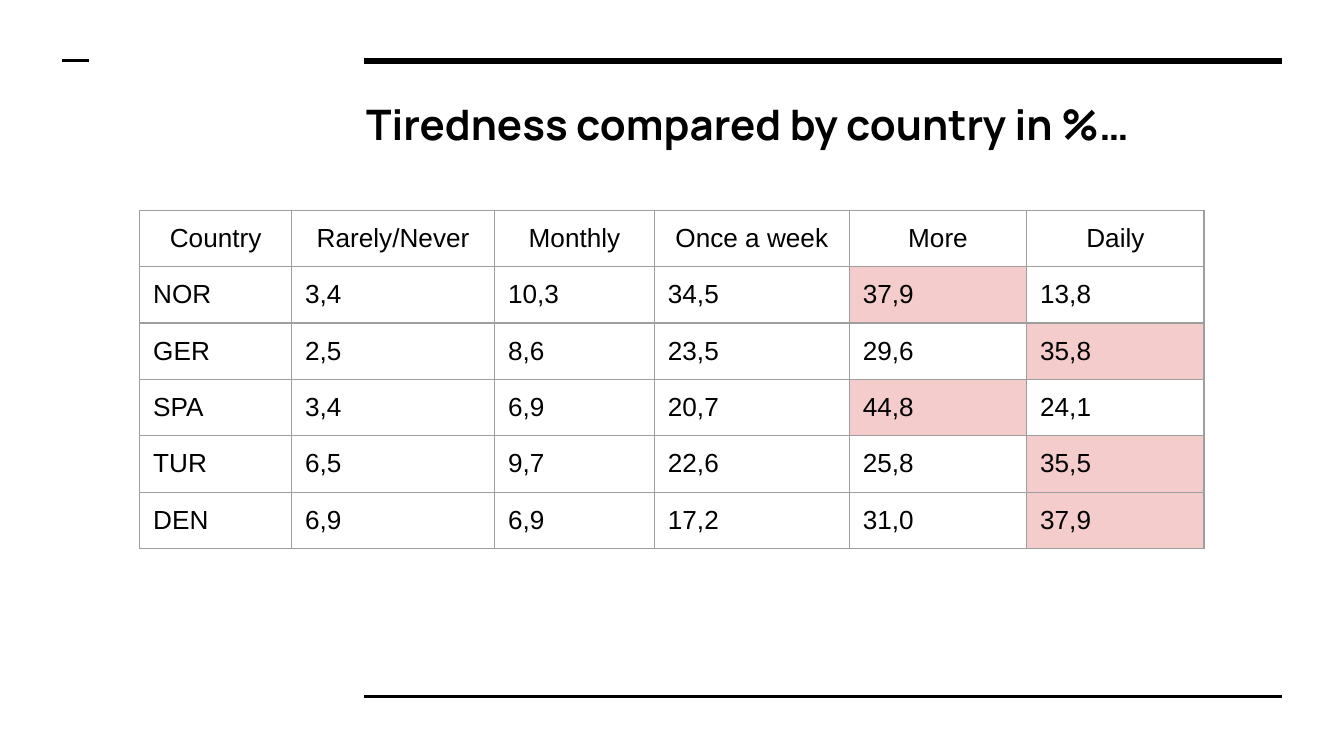
from lxml.etree import SubElement
from pptx import Presentation
from pptx.dml.color import RGBColor
from pptx.enum.shapes import MSO_CONNECTOR
from pptx.enum.text import PP_ALIGN
from pptx.oxml.ns import qn
from pptx.util import Inches, Pt


def color(value):
    return RGBColor.from_string(value)


def style_run(r, font, size, bold=False):
    r.font.name = font
    r.font.size = Pt(size)
    r.font.bold = bold
    r.font.color.rgb = color("000000")


prs = Presentation()
prs.slide_width = Inches(10)
prs.slide_height = prs.slide_width * 9 // 16
W, H = prs.slide_width, prs.slide_height
s = prs.slides.add_slide(prs.slide_layouts[6])

rules = [(0.271, 0.954, 0.0805, 3), (0.271, 0.954, 0.921, 1.5), (0.0465, 0.0665, 0.0805, 1.5)]
for left, right, y, width in rules:
    line = s.shapes.add_connector(
        MSO_CONNECTOR.STRAIGHT, int(W * left), int(H * y), int(W * right), int(H * y))
    line.line.color.rgb = color("000000")
    line.line.width = Pt(width)
    SubElement(line._element.spPr, qn("a:effectLst"))

title = s.shapes.add_textbox(int(W * 0.2625), int(H * 0.1125), int(W * 0.691), int(H * 0.123))
tf = title.text_frame
tf.word_wrap = True
tf.margin_left = tf.margin_right = tf.margin_top = tf.margin_bottom = Inches(0.1)
tf.text = "Tiredness compared by country in %…"
style_run(tf.paragraphs[0].runs[0], "Manrope", 22.5, True)

headers = ["Country", "Rarely/Never", "Monthly", "Once a week", "More", "Daily"]
answers = [
    ["NOR", 3.4, 10.3, 34.5, 37.9, 13.8],
    ["GER", 2.5, 8.6, 23.5, 29.6, 35.8],
    ["SPA", 3.4, 6.9, 20.7, 44.8, 24.1],
    ["TUR", 6.5, 9.7, 22.6, 25.8, 35.5],
    ["DEN", 6.9, 6.9, 17.2, 31.0, 37.9],
]
rows = [headers] + answers
col_shares = [0.113, 0.151, 0.119, 0.145, 0.132, 0.132]
row_height = Inches(0.42)

table = s.shapes.add_table(
    len(rows), len(headers), int(W * 0.104), int(H * 0.278),
    int(W * sum(col_shares)), row_height * len(rows)).table
table.first_row = False
table.horz_banding = False
for col, share in zip(table.columns, col_shares):
    col.width = int(W * share)

for i, row in enumerate(rows):
    table.rows[i].height = row_height
    for j, value in enumerate(row):
        cell = table.cell(i, j)
        cell.margin_left = cell.margin_right = cell.margin_top = Inches(0.1)
        cell.margin_bottom = Inches(0.08)
        is_number = isinstance(value, float)
        cell.text = f"{value:.1f}".replace(".", ",") if is_number else value
        p = cell.text_frame.paragraphs[0]
        p.alignment = PP_ALIGN.CENTER if i == 0 else PP_ALIGN.LEFT
        style_run(p.runs[0], "Arial", 14)
        tcPr = cell._tc.get_or_add_tcPr()
        for side in ("lnL", "lnR", "lnT", "lnB"):
            ln = SubElement(tcPr, qn(f"a:{side}"), w=str(Pt(0.75)))
            fill = SubElement(ln, qn("a:solidFill"))
            SubElement(fill, qn("a:srgbClr"), val="9E9E9E")
        if is_number and value == max(row[1:]):
            cell.fill.solid()
            cell.fill.fore_color.rgb = color("F4CCCC")
        else:
            cell.fill.background()

prs.save("out.pptx")
